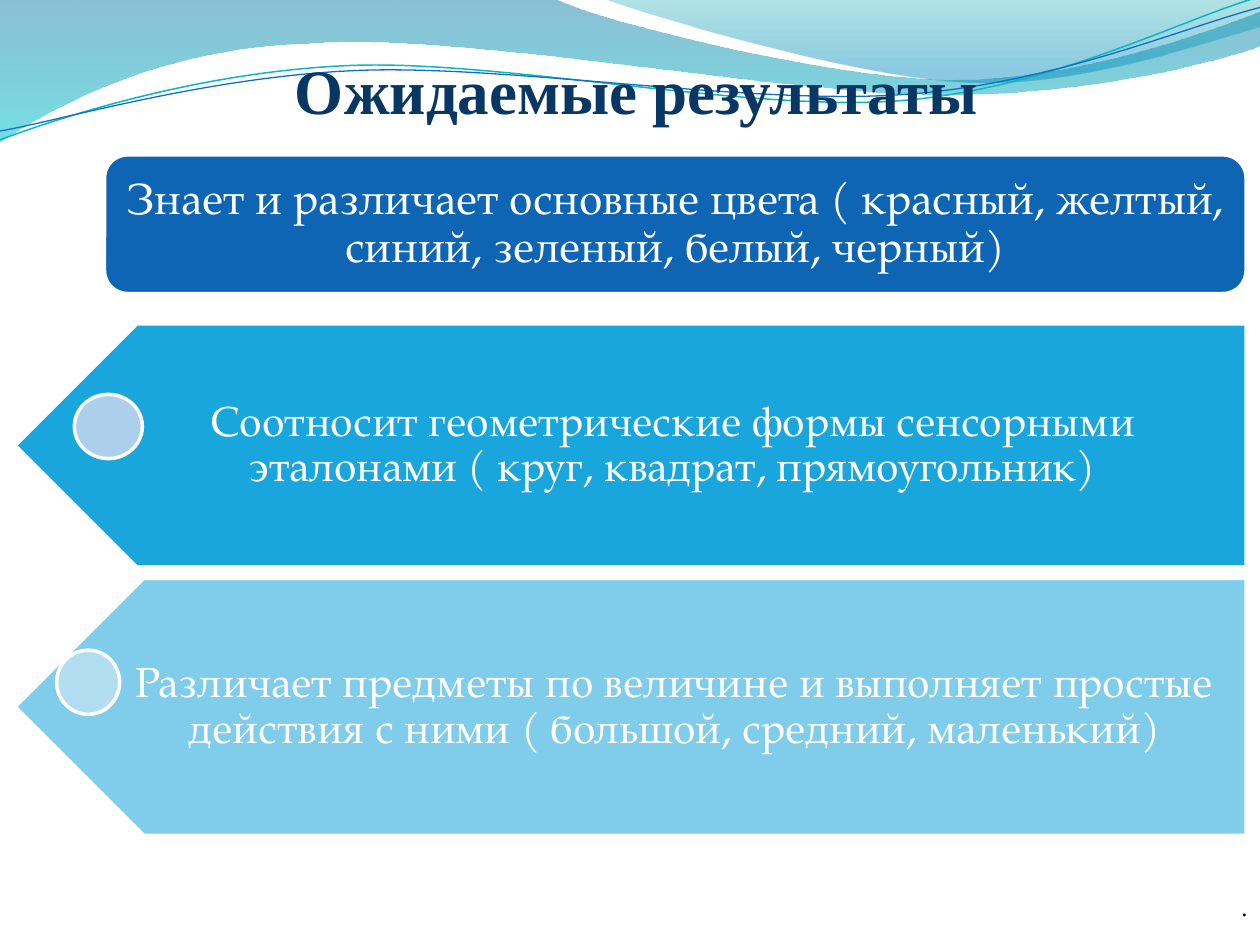
from math import cos, radians, sin

from lxml import etree
from pptx import Presentation
from pptx.dml.color import RGBColor
from pptx.enum.shapes import MSO_SHAPE
from pptx.enum.text import MSO_ANCHOR, PP_ALIGN
from pptx.oxml.ns import qn
from pptx.util import Inches, Pt

ROUNDED, PENTAGON, OVAL = MSO_SHAPE.ROUNDED_RECTANGLE, MSO_SHAPE.PENTAGON, MSO_SHAPE.OVAL
TOP, MIDDLE, BOTTOM = MSO_ANCHOR.TOP, MSO_ANCHOR.MIDDLE, MSO_ANCHOR.BOTTOM
CENTER, RIGHT = PP_ALIGN.CENTER, PP_ALIGN.RIGHT

COLORS = {
    "title": "083763", "text": "FFFFFF", "outline": "FFFFFF", "footer": "000000",
    "header": "0E65B4", "arrow": "009DD9", "dot": "BDD5ED", "pale_dot": "E8F0F8",
    "wave_top": "0074A1", "wave_bottom": "00C6CF",
    "corner_top": "00A1A9", "corner_bottom": "008BBF",
    "teal_line": "0AB8BF", "blue_line": "0F6FC6",
}
BODY_FONT, SERIF_FONT = "TeX Gyre Pagella", "Times New Roman"
CURVE_TILT = -2.7

# Each outline is a start point followed by line ends (2 numbers) or Bezier curves (6 numbers).
WAVE = [(0, 0), (4.4, -0.01), (4.76, 0.17, 6.64, 0.63, 7.58, 0.63),
        (8.53, 0.63, 9.58, 0.26, 10, 0.09), (10.01, 0.36),
        (9.83, 0.44, 8.7, 0.76, 7.46, 0.75), (6.22, 0.75, 3.82, 0.28, 2.57, 0.34),
        (1.29, 0.36, 0.46, 0.83, -0.01, 1.13)]
CORNER = [(4.79, -0.01), (5.09, 0.11, 6.82, 0.62, 7.69, 0.65),
          (8.56, 0.69, 9.61, 0.32, 10, 0.21), (10, 0)]
TEAL_CURVE = [(0, 1.11), (0.48, 0.93, 1.58, 0.57, 2.77, 0.52),
              (3.95, 0.47, 5.93, 0.89, 7.13, 0.8), (8.33, 0.71, 9.38, 0.15, 9.98, -0.02)]
BLUE_CURVE = [(0, 1.04), (0.47, 0.96, 1.64, 0.61, 2.83, 0.56),
              (4.03, 0.51, 5.97, 0.84, 7.17, 0.75), (8.36, 0.67, 9.41, 0.21, 10, 0.06)]


def rgb(name):
    return RGBColor.from_string(COLORS[name])


def set_opacity(shape, percents):
    """Give each fill colour of the shape its opacity, in order."""
    for color, percent in zip(shape._element.spPr.iter(qn("a:srgbClr")), percents):
        etree.SubElement(color, qn("a:alpha")).set("val", str(percent * 1000))


def turn(segments, center, degrees):
    """Turn every point of the outline clockwise about the center."""
    cosine, sine = cos(radians(degrees)), sin(radians(degrees))
    turned = []
    for segment in segments:
        numbers = []
        for x, y in zip(segment[::2], segment[1::2]):
            dx, dy = x - center[0], y - center[1]
            numbers += [center[0] + dx * cosine - dy * sine,
                        center[1] + dx * sine + dy * cosine]
        turned.append(tuple(numbers))
    return turned


def add_outline(slide, segments, closed):
    points = [(Inches(x), Inches(y)) for segment in segments
              for x, y in zip(segment[::2], segment[1::2])]
    builder = slide.shapes.build_freeform(*points[0])
    builder.add_line_segments(points[1:], close=closed)
    shape = builder.convert_to_shape()
    shape.shadow.inherit = False
    lines = iter(list(shape._element.iter(qn("a:lnTo"))))
    for segment in segments[1:]:
        first = next(lines)
        if len(segment) == 6:
            first.tag = qn("a:cubicBezTo")
            for line in (next(lines), next(lines)):
                first.append(line[0])
                line.getparent().remove(line)
    return shape


def add_gradient_area(slide, segments, stops):
    shape = add_outline(slide, segments, closed=True)
    shape.fill.gradient()
    shape.fill.gradient_angle = 270
    for stop, (position, color, _) in zip(shape.fill.gradient_stops, stops):
        stop.position = position
        stop.color.rgb = rgb(color)
    set_opacity(shape, [opacity for _, _, opacity in stops])
    shape.line.fill.background()


def add_tilted_curve(slide, segments, center, color, width):
    shape = add_outline(slide, turn(segments, center, -CURVE_TILT), closed=False)
    shape.rotation = CURVE_TILT
    shape.fill.background()
    shape.line.color.rgb = rgb(color)
    shape.line.width = Pt(width)


def add_filled_shape(slide, kind, box, color, opacity=100):
    shape = slide.shapes.add_shape(kind, *map(Inches, box))
    shape.shadow.inherit = False
    shape.fill.solid()
    shape.fill.fore_color.rgb = rgb(color)
    if opacity < 100:
        set_opacity(shape, [opacity])
    shape.line.color.rgb = rgb("outline")
    shape.line.width = Pt(2)
    return shape


def add_text(slide, text, box, *, size, font=BODY_FONT, color="text", bold=False,
             align=CENTER, anchor=MIDDLE, insets=(0.1, 0.1, 0.1, 0.1), spacing=0.9):
    frame = slide.shapes.add_textbox(*map(Inches, box)).text_frame
    frame.word_wrap = True
    frame.vertical_anchor = anchor
    (frame.margin_left, frame.margin_top,
     frame.margin_right, frame.margin_bottom) = map(Inches, insets)
    paragraph = frame.paragraphs[0]
    paragraph.alignment = align
    paragraph.line_spacing = spacing
    run = paragraph.add_run()
    run.text = text
    run.font.size = Pt(size)
    run.font.name = font
    run.font.bold = bold
    run.font.color.rgb = rgb(color)


def add_waves(slide):
    add_gradient_area(slide, WAVE, [(0, "wave_top", 45), (1, "wave_bottom", 55)])
    add_gradient_area(slide, CORNER, [(0, "corner_top", 30), (0.8, "corner_bottom", 45)])
    add_tilted_curve(slide, TEAL_CURVE, (4.99, 0.58), "teal_line", 0.85)
    add_tilted_curve(slide, BLUE_CURVE, (5, 0.59), "blue_line", 0.75)


def add_header(slide, box, text):
    left, top, width, height = box
    add_filled_shape(slide, ROUNDED, box, "header")
    inset = 0.05
    add_text(slide, text, (left + inset, top + inset, width - 2 * inset, height - 2 * inset),
             size=25)


def add_arrow_row(slide, box, text, opacity, dot_box, dot_color):
    """Add a left-pointing arrow with its text and a dot near the tip."""
    left, top, width, height = box
    add_filled_shape(slide, PENTAGON, box, "arrow", opacity).rotation = 180
    indent = height / 4
    add_text(slide, text, (left + indent, top, width - indent, height), size=24,
             insets=(0.38, 0.1, 0.19, 0.1))
    add_filled_shape(slide, OVAL, dot_box, dot_color, opacity)


def main():
    presentation = Presentation()
    presentation.slide_width, presentation.slide_height = Inches(10), Inches(7.5)
    slide = presentation.slides.add_slide(presentation.slide_layouts[6])
    add_waves(slide)
    add_text(slide, "Ожидаемые результаты", (0.55, 0.23, 9, 0.78), size=36, font=SERIF_FONT,
             color="title", bold=True, anchor=BOTTOM, insets=(0, 0.05, 0, 0), spacing=1.0)
    add_header(slide, (0.83, 1.23, 9.06, 1.1),
               "Знает и различает основные цвета ( красный, желтый, синий, зеленый, белый, черный)")
    add_arrow_row(slide, (0.12, 2.57, 9.77, 1.93),
                  "Соотносит геометрические формы сенсорными эталонами "
                  "( круг, квадрат, прямоугольник)",
                  90, (0.59, 3.13, 0.54, 0.51), "dot")
    add_arrow_row(slide, (0.12, 4.59, 9.77, 2.04),
                  "Различает предметы по величине и выполняет простые действия с ними "
                  "( большой, средний, маленький)",
                  50, (0.45, 5.16, 0.5, 0.51), "pale_dot")
    add_text(slide, ".", (6.88, 7.03, 3.12, 0.64), size=14, font=SERIF_FONT, color="footer",
             align=RIGHT, anchor=TOP, insets=(0.1, 0.05, 0.1, 0.05), spacing=1.0)
    presentation.save("out.pptx")


if __name__ == "__main__":
    main()
